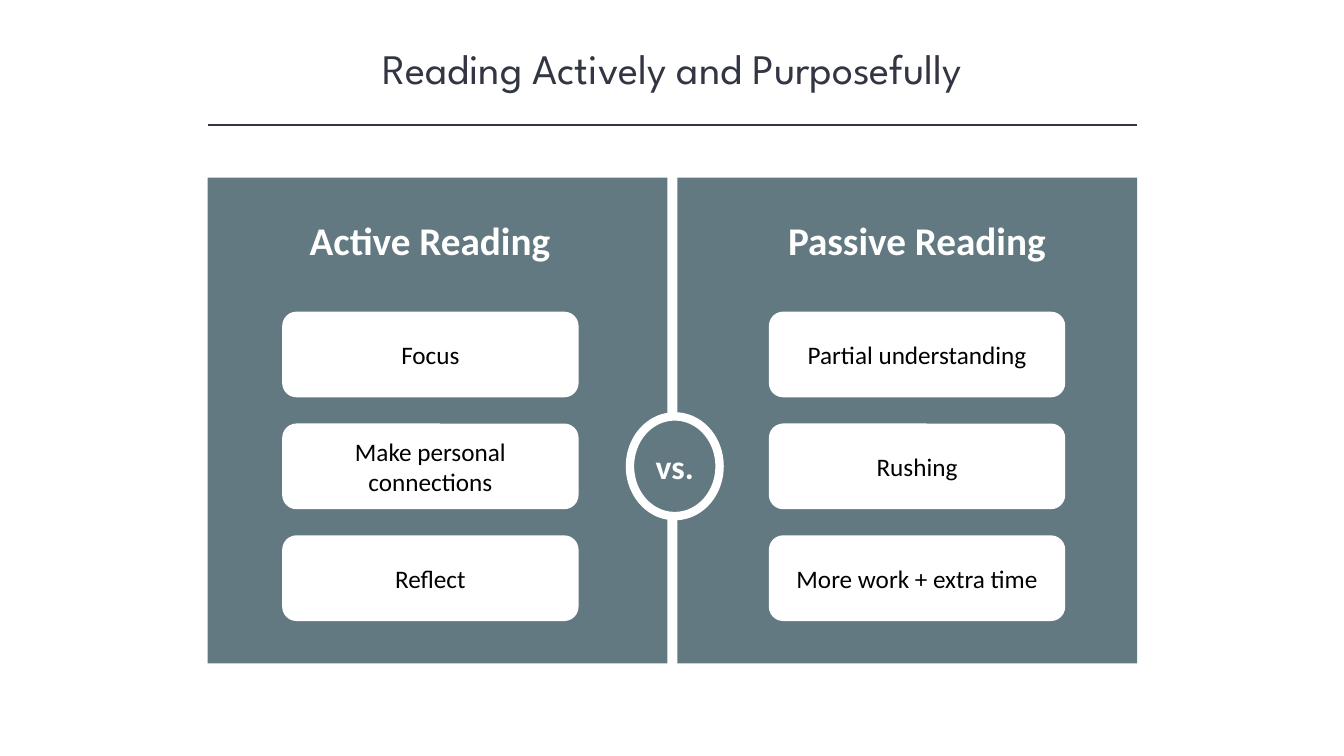
import pptx
import pptx.util
import pptx.dml.color
import pptx.enum.shapes
import pptx.enum.text
import pptx.oxml.ns
import lxml.etree

Pt = pptx.util.Pt
SHAPES = pptx.enum.shapes.MSO_SHAPE

TITLE = "Reading Actively and Purposefully"
VERSUS = "vs."
# Each column: heading, heading left, panel left, cards left, card texts
COLUMNS = [
    ("Active Reading", 176.4, 148.3, 201.6,
     ["Focus", "Make personal connections", "Reflect"]),
    ("Passive Reading", 524.2, 483.8, 549.2,
     ["Partial understanding", "Rushing", "More work + extra time"]),
]
COLORS = {"slate": "627981", "ink": "323542", "white": "FFFFFF", "black": "000000"}

PANEL_TOP, PANEL_WIDTH, PANEL_HEIGHT = 126.8, 328.4, 347
HEADING_TOP, HEADING_WIDTH, HEADING_HEIGHT = 150.5, 261.4, 41
CARD_TOP, CARD_WIDTH, CARD_HEIGHT, CARD_STEP = 222.6, 211.7, 61.2, 79.9
RULE_Y = 89.4


def color(name):
    return pptx.dml.color.RGBColor.from_string(COLORS[name])


def write(box, text, size, ink, font="Calibri", bold=False, middle=True):
    frame = box.text_frame
    frame.word_wrap = True
    anchors = pptx.enum.text.MSO_ANCHOR
    frame.vertical_anchor = anchors.MIDDLE if middle else anchors.TOP
    para = frame.paragraphs[0]
    para.alignment = pptx.enum.text.PP_ALIGN.CENTER
    span = para.add_run()
    span.text = text
    span.font.name = font
    span.font.size = Pt(size)
    span.font.bold = bold
    span.font.color.rgb = color(ink)


def add_text(page, bounds, text, **style):
    write(page.shapes.add_textbox(*map(Pt, bounds)), text, **style)


def add_block(page, kind, bounds, fill, outline=None):
    block = page.shapes.add_shape(kind, *map(Pt, bounds))
    block.shadow.inherit = False
    block.fill.solid()
    block.fill.fore_color.rgb = color(fill)
    if outline:
        block.line.color.rgb = color(outline)
        block.line.width = Pt(6)
    else:
        block.line.fill.background()
    return block


def add_rule(page, left, right, y):
    rule = page.shapes.add_connector(
        pptx.enum.shapes.MSO_CONNECTOR.STRAIGHT, Pt(left), Pt(y), Pt(right), Pt(y))
    rule.line.color.rgb = color("ink")
    rule.line.width = Pt(1)
    lxml.etree.SubElement(rule._element.spPr, pptx.oxml.ns.qn("a:effectLst"))


def main():
    deck = pptx.Presentation()
    deck.slide_width, deck.slide_height = Pt(960), Pt(540)
    page = deck.slides.add_slide(deck.slide_layouts[6])

    add_text(page, (120.2, 26.6, 720, 43.9), TITLE, size=30, ink="ink",
             font="League Spartan", middle=False)
    add_rule(page, COLUMNS[0][2], COLUMNS[1][2] + PANEL_WIDTH, RULE_Y)

    for heading, heading_left, panel_left, card_left, cards in COLUMNS:
        add_block(page, SHAPES.RECTANGLE,
                  (panel_left, PANEL_TOP, PANEL_WIDTH, PANEL_HEIGHT), "slate")
        add_text(page, (heading_left, HEADING_TOP, HEADING_WIDTH, HEADING_HEIGHT),
                 heading, size=28, ink="white", bold=True)
        for row, text in enumerate(cards):
            top = CARD_TOP + row * CARD_STEP
            card = add_block(page, SHAPES.ROUNDED_RECTANGLE,
                             (card_left, top, CARD_WIDTH, CARD_HEIGHT), "white")
            write(card, text, size=18, ink="black")

    badge = add_block(page, SHAPES.OVAL, (450, 297.4, 64, 71.3), "slate", outline="white")
    write(badge, VERSUS, size=24, ink="white", bold=True)
    deck.save("out.pptx")


if __name__ == "__main__":
    main()
